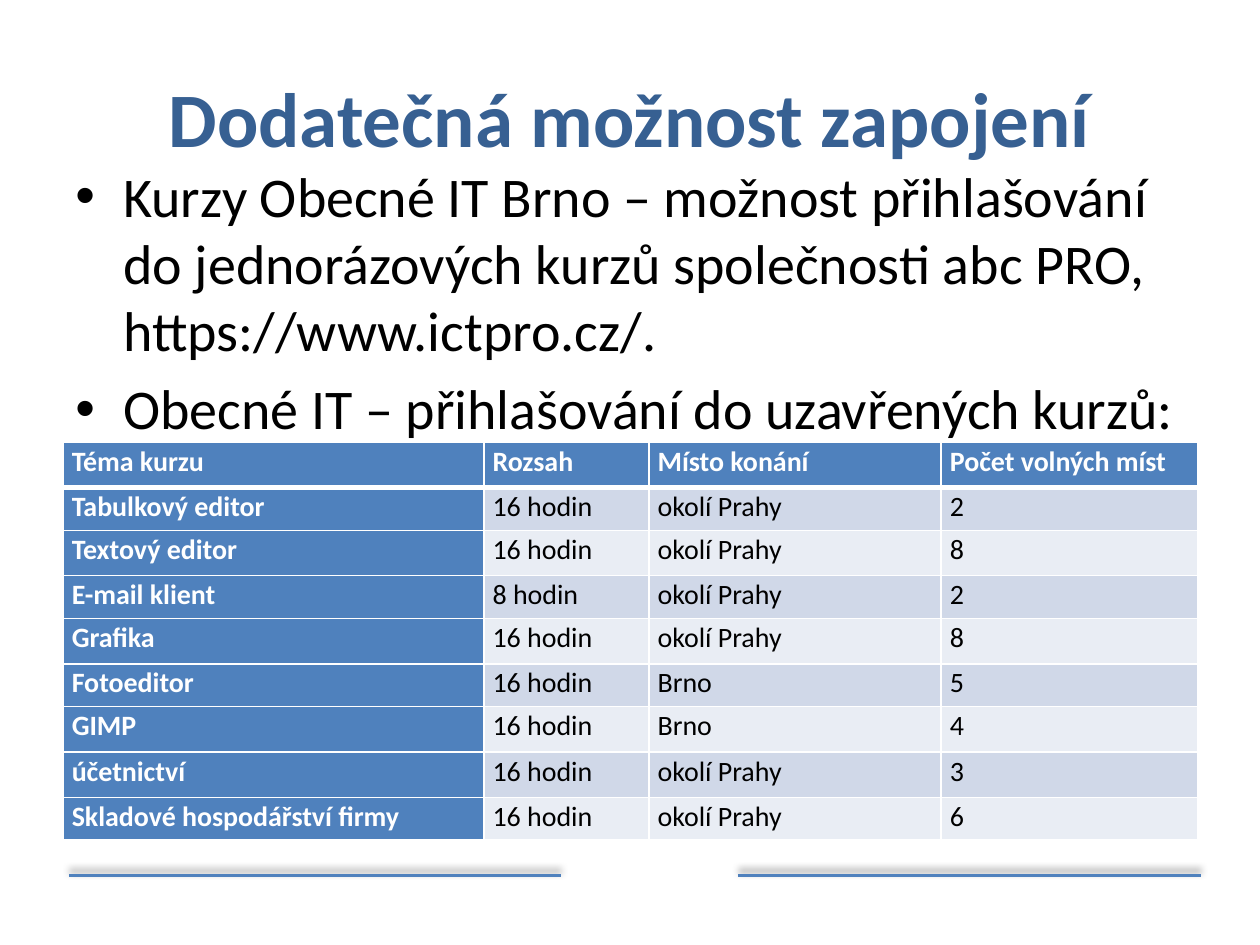
from dataclasses import dataclass

from lxml.etree import SubElement
from pptx import Presentation
from pptx.dml.color import RGBColor
from pptx.enum.shapes import MSO_CONNECTOR
from pptx.enum.text import MSO_ANCHOR, PP_ALIGN
from pptx.oxml.ns import qn
from pptx.util import Inches, Pt

TITLE = "Dodatečná možnost zapojení"
BULLETS = [
    "Kurzy Obecné IT Brno – možnost přihlašování do jednorázových kurzů "
    "společnosti abc PRO, https://www.ictpro.cz/.",
    "Obecné IT – přihlašování do uzavřených kurzů:",
]
COURSES = [
    ("Téma kurzu", "Rozsah", "Místo konání", "Počet volných míst"),
    ("Tabulkový editor", "16 hodin", "okolí Prahy", "2"),
    ("Textový editor", "16 hodin", "okolí Prahy", "8"),
    ("E-mail klient", "8 hodin", "okolí Prahy", "2"),
    ("Grafika", "16 hodin", "okolí Prahy", "8"),
    ("Fotoeditor", "16 hodin", "Brno", "5"),
    ("GIMP", "16 hodin", "Brno", "4"),
    ("účetnictví", "16 hodin", "okolí Prahy", "3"),
    ("Skladové hospodářství firmy", "16 hodin", "okolí Prahy", "6"),
]
COLUMN_WIDTHS = [3.34, 1.31, 2.32, 2.04]
ROW_HEIGHTS = [0.36, 0.34, 0.36, 0.34, 0.36, 0.34, 0.36, 0.36, 0.34]
FOOTER_LINES = [(0.55, 4.45), (5.86, 9.53)]
FOOTER_TOP = 6.95
LEFT, WIDTH = 0.5, 9


@dataclass(frozen=True)
class Theme:
    font: str = "Calibri"
    title: str = "376092"
    accent: str = "4F81BD"
    text: str = "000000"
    light: str = "FFFFFF"
    bands: tuple = ("D0D8E8", "E9EDF4")
    title_size: int = 44
    body_size: int = 32
    table_size: int = 16


THEME = Theme()


def style_font(paragraph, size, color, bold=False):
    font = paragraph.font
    font.name = THEME.font
    font.size = Pt(size)
    font.bold = bold
    font.color.rgb = RGBColor.from_string(color)


def add_solid_fill(parent, color):
    fill = SubElement(parent, qn("a:solidFill"))
    return SubElement(fill, qn("a:srgbClr"), val=color)


def add_footer_line(slide, start, end):
    line = slide.shapes.add_connector(
        MSO_CONNECTOR.STRAIGHT,
        Inches(start), Inches(FOOTER_TOP), Inches(end), Inches(FOOTER_TOP))
    line.line.color.rgb = RGBColor.from_string(THEME.accent)
    line.line.width = Pt(2)
    effects = SubElement(line._element.spPr, qn("a:effectLst"))
    shadow = SubElement(
        effects, qn("a:outerShdw"), blurRad=str(Pt(4)), dist=str(Pt(3)),
        dir=str(270 * 60000), rotWithShape="0")
    color = SubElement(shadow, qn("a:srgbClr"), val=THEME.text)
    SubElement(color, qn("a:alpha"), val="40000")


def add_text_frame(slide, top, height):
    box = slide.shapes.add_textbox(
        Inches(LEFT), Inches(top), Inches(WIDTH), Inches(height))
    box.text_frame.word_wrap = True
    return box.text_frame


def add_title(slide):
    frame = add_text_frame(slide, 0.3, 1.25)
    frame.vertical_anchor = MSO_ANCHOR.MIDDLE
    paragraph = frame.paragraphs[0]
    paragraph.text = TITLE
    paragraph.alignment = PP_ALIGN.CENTER
    style_font(paragraph, THEME.title_size, THEME.title, bold=True)


def add_bullets(slide):
    frame = add_text_frame(slide, 1.23, 5.47)
    for index, text in enumerate(BULLETS):
        paragraph = frame.add_paragraph() if index else frame.paragraphs[0]
        paragraph.text = text
        properties = paragraph._p.get_or_add_pPr()
        properties.set("marL", str(Inches(0.38)))
        properties.set("indent", str(-Inches(0.38)))
        SubElement(properties, qn("a:buFont"), typeface="Arial")
        SubElement(properties, qn("a:buChar"), char="•")
        if index:
            paragraph.space_before = Pt(0.2 * THEME.body_size)
        style_font(paragraph, THEME.body_size, THEME.text)


def set_borders(cell, row):
    """White rules, with a thicker one between the header and the body."""
    widths = {"L": 1, "R": 1, "T": 3 if row == 1 else 1, "B": 3 if row == 0 else 1}
    properties = cell._tc.get_or_add_tcPr()
    for side, width in widths.items():
        border = SubElement(properties, qn(f"a:ln{side}"), w=str(Pt(width)))
        add_solid_fill(border, THEME.light)


def fill_cell(cell, text, row, column):
    is_heading = row == 0 or column == 0
    set_borders(cell, row)
    cell.fill.solid()
    cell.fill.fore_color.rgb = RGBColor.from_string(
        THEME.accent if is_heading else THEME.bands[(row - 1) % 2])
    cell.margin_left = cell.margin_right = Inches(0.07)
    cell.margin_top = cell.margin_bottom = 0
    paragraph = cell.text_frame.paragraphs[0]
    paragraph.text = text
    paragraph.line_spacing = 1.07
    style_font(paragraph, THEME.table_size,
               THEME.light if is_heading else THEME.text, bold=is_heading)


def add_course_table(slide):
    table = slide.shapes.add_table(
        len(COURSES), len(COLUMN_WIDTHS), Inches(LEFT), Inches(3.51),
        Inches(sum(COLUMN_WIDTHS)), Inches(sum(ROW_HEIGHTS))).table
    table.first_col = True
    for column, width in zip(table.columns, COLUMN_WIDTHS):
        column.width = Inches(width)
    for row, height in zip(table.rows, ROW_HEIGHTS):
        row.height = Inches(height)
    for row, course in enumerate(COURSES):
        for column, text in enumerate(course):
            fill_cell(table.cell(row, column), text, row, column)


def main():
    presentation = Presentation()
    presentation.slide_width = Inches(10)
    presentation.slide_height = Inches(7.5)
    slide = presentation.slides.add_slide(presentation.slide_layouts[6])
    for start, end in FOOTER_LINES:
        add_footer_line(slide, start, end)
    add_title(slide)
    add_bullets(slide)
    add_course_table(slide)
    presentation.save("out.pptx")


if __name__ == "__main__":
    main()
